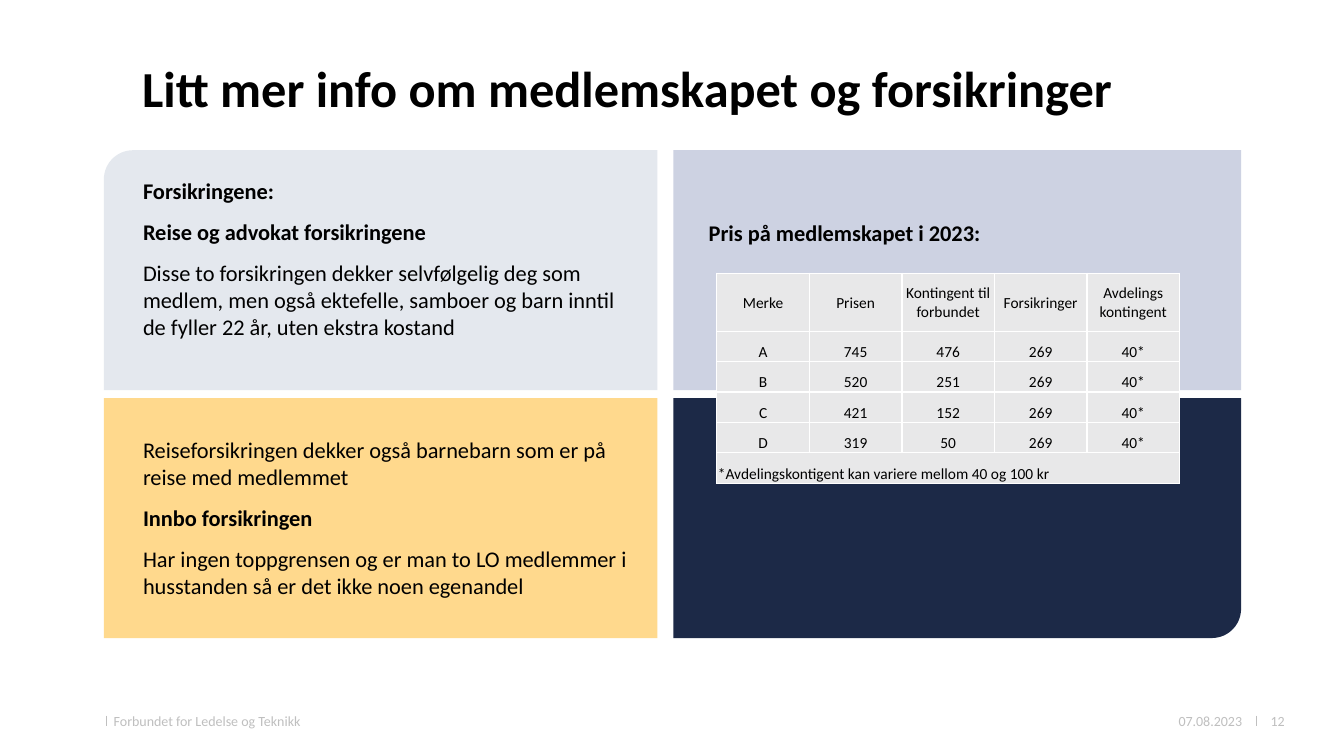
from math import cos, sin, radians
from lxml.etree import SubElement
from pptx import Presentation
from pptx.dml.color import RGBColor as RGB
from pptx.enum.shapes import MSO_CONNECTOR as Line, MSO_SHAPE as Shape
from pptx.enum.text import MSO_ANCHOR as Anchor, MSO_AUTO_SIZE as Auto, PP_ALIGN as Align
from pptx.oxml import parse_xml
from pptx.oxml.ns import nsdecls, qn
from pptx.util import Inches, Pt

GREY = "BFBFBF"


def color(code):
    return RGB.from_string(code)


def write(para, text, size, bold=False, ink="000000", align=Align.LEFT):
    para.alignment = align
    for i, part in enumerate(text.split("\n")):
        if i:
            para.add_line_break()
        run = para.add_run()
        run.text = part
        font = run.font
        font.name, font.size, font.bold = "Calibri", Pt(size), bold
        font.color.rgb = color(ink)


deck = Presentation()
deck.slide_width, deck.slide_height = Inches(13.33), Inches(7.5)
slide = deck.slides.add_slide(deck.slide_layouts[5])
shapes = slide.shapes

# Title
title = shapes.title
title.left, title.top = Inches(1.31), Inches(0.58)
title.width, title.height = Inches(11.59), Inches(1.28)
frame = title.text_frame
frame.auto_size, frame.word_wrap = Auto.NONE, True
frame.vertical_anchor = Anchor.TOP
frame.paragraphs[0].line_spacing = 0.9
write(frame.paragraphs[0], "Litt mer info om medlemskapet og forsikringer", 36, True)

# Four panels: left, top, width, fill, start angle of the round corner
HIGH, BEND = 2.38, 0.29
panels = [
    (6.68, 3.95, 5.63, "1C2947", 0),
    (1.03, 1.49, 5.49, "E4E8EE", 180),
    (1.03, 3.95, 5.49, "FFD98D", None),
    (6.68, 1.49, 5.63, "CDD2E2", None),
]
for left, top, width, fill, start in panels:
    if start is None:
        panel = shapes.add_shape(Shape.RECTANGLE, Inches(left), Inches(top),
                                 Inches(width), Inches(HIGH))
    else:
        right, base = left + width, top + HIGH
        mid = (right - BEND, base - BEND) if start == 0 else (left + BEND, top + BEND)
        arc = [(mid[0] + BEND * cos(radians(a)), mid[1] + BEND * sin(radians(a)))
               for a in range(start, start + 91, 6)]
        if start == 0:
            rest = [(left, base), (left, top), (right, top)]
        else:
            rest = [(right, top), (right, base), (left, base)]
        dots = [(Inches(x), Inches(y)) for x, y in arc + rest]
        path = shapes.build_freeform(*dots[0])
        path.add_line_segments(dots[1:], close=True)
        panel = path.convert_to_shape()
    panel.shadow.inherit = False
    panel.fill.solid()
    panel.fill.fore_color.rgb = color(fill)
    panel.line.fill.background()

# Footer marks
for x in (1.05, 12.46):
    mark = shapes.add_connector(Line.STRAIGHT, Inches(x), Inches(7.1), Inches(x), Inches(7.2))
    mark.line.color.rgb = color(GREY)
    mark.line.width = Pt(0.5)
    SubElement(mark._element.spPr, qn("a:effectLst"))

# Footer texts
footer = [
    (1.03, 7.02, 4.46, 0.27, "Forbundet for Ledelse og Teknikk", Align.LEFT, Anchor.TOP),
    (12.21, 6.95, 0.63, 0.4, "12", Align.RIGHT, Anchor.MIDDLE),
    (11.59, 6.95, 1.02, 0.4, "07.08.2023", Align.LEFT, Anchor.MIDDLE),
]
for left, top, width, high, text, align, anchor in footer:
    frame = shapes.add_textbox(Inches(left), Inches(top), Inches(width), Inches(high)).text_frame
    frame.word_wrap, frame.vertical_anchor = True, anchor
    write(frame.paragraphs[0], text, 10, ink=GREY, align=align)

# Body texts: text, bold, space before
cover = [
    ("Forsikringene:", True, 0),
    ("Reise og advokat forsikringene", True, 10),
    ("Disse to forsikringen dekker selvfølgelig deg som medlem, men også ektefelle, "
     "samboer og barn inntil de fyller 22 år, uten ekstra kostand", False, 10),
    ("Reiseforsikringen dekker også barnebarn som er på reise med medlemmet", False, 69),
    ("Innbo forsikringen", True, 10),
    ("Har ingen toppgrensen og er man to LO medlemmer i husstanden så er det ikke "
     "noen egenandel", False, 10),
]
price = [("Pris på medlemskapet i 2023:", True, 0)]
for left, top, high, lines in [(1.32, 1.71, 4.5, cover), (6.93, 2.12, 0.45, price)]:
    frame = shapes.add_textbox(Inches(left), Inches(top), Inches(5.09), Inches(high)).text_frame
    frame.word_wrap = True
    for i, (text, bold, gap) in enumerate(lines):
        para = frame.add_paragraph() if i else frame.paragraphs[0]
        para.space_before = Pt(gap)
        write(para, text, 16, bold)

# Price table
rows = [
    ["Merke", "Prisen", "Kontingent til\nforbundet", "Forsikringer", "Avdelings\nkontingent"],
    ["A", "745", "476", "269", "40*"],
    ["B", "520", "251", "269", "40*"],
    ["C", "421", "152", "269", "40*"],
    ["D", "319", "50", "269", "40*"],
    ["*Avdelingskontigent kan variere mellom 40 og 100 kr", "", "", "", ""],
]
highs = [0.58, 0.3, 0.3, 0.3, 0.3, 0.31]
last = len(rows) - 1
table = shapes.add_table(len(rows), 5, Inches(7.11), Inches(2.71),
                         Inches(4.59), Inches(sum(highs))).table
table.first_row = table.horz_banding = False
for col in table.columns:
    col.width = Inches(4.59 / 5)
for r, row in enumerate(rows):
    table.rows[r].height = Inches(highs[r])
    for c, text in enumerate(row):
        cell = table.cell(r, c)
        cell.margin_left = cell.margin_right = cell.margin_top = Inches(0.01)
        cell.margin_bottom = 0
        cell.vertical_anchor = Anchor.BOTTOM if r else Anchor.MIDDLE
        cell.fill.solid()
        cell.fill.fore_color.rgb = color("E8E8E9")
        props = cell._tc.get_or_add_tcPr()
        for i, side in enumerate("LRTB"):
            props.insert(i, parse_xml(
                f'<a:ln{side} {nsdecls("a")} w="12700"><a:solidFill>'
                f'<a:srgbClr val="FFFFFF"/></a:solidFill></a:ln{side}>'))
        if text:
            align = Align.LEFT if r == last else Align.CENTER
            write(cell.text_frame.paragraphs[0], text, 11, align=align)
table.cell(last, 0).merge(table.cell(last, 4))

deck.save("out.pptx")
